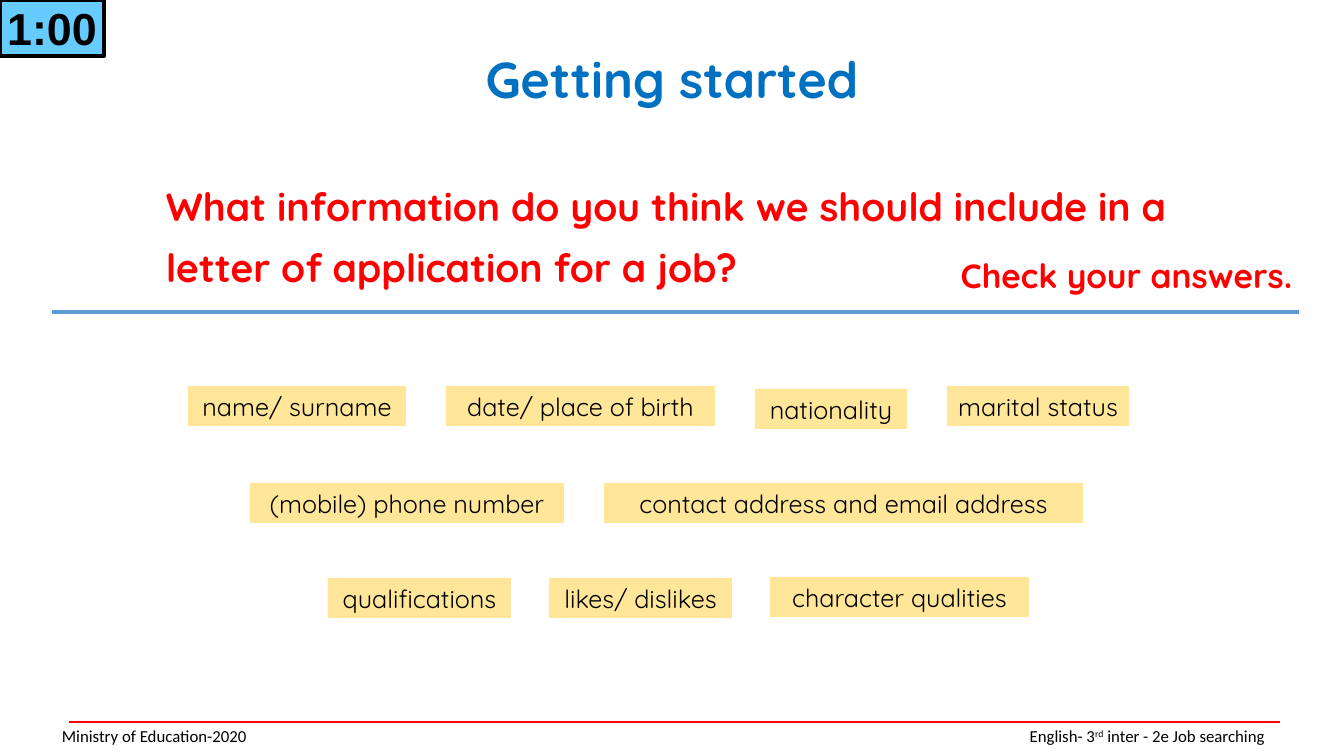
from lxml.etree import SubElement
from pptx import Presentation
from pptx.dml.color import RGBColor
from pptx.enum.shapes import MSO_CONNECTOR as Connector, MSO_SHAPE as Shape
from pptx.enum.text import MSO_ANCHOR as Anchor, MSO_AUTO_SIZE as AutoSize, PP_ALIGN as Align
from pptx.oxml.ns import qn
from pptx.util import Emu, Pt

BLUE = RGBColor(0x00, 0x70, 0xC0)
RED = RGBColor(0xFF, 0x00, 0x00)
BLACK = RGBColor(0x00, 0x00, 0x00)
SKY = RGBColor(0x66, 0xCC, 0xFF)
RULE_BLUE = RGBColor(0x5B, 0x9B, 0xD5)
YELLOW = RGBColor(0xFF, 0xE6, 0x99)
FONT = "Quicksand"

# Content
TITLE = "Getting started"
QUESTION = "What information do you think we should include in a letter of application for a job?"
CHECK = "Check your answers."
TIMER = "1:00"
FOOTER = [("Ministry of Education-2020\tEnglish- 3", False), ("rd", True),
          (" inter - 2e Job searching", False)]
FOOTER_TAB = 1203

# Answer rows: left, top, gap, [(text, width, vertical shift)]
CHIP_HEIGHT = 40
ANSWER_ROWS = [
    (188, 386, 40, [("name/ surname", 218, 0), ("date/ place of birth", 269, 0),
                    ("nationality", 152, 3), ("marital status", 182, 0)]),
    (250, 483, 40, [("(mobile) phone number", 314, 0),
                    ("contact address and email address", 479, 0)]),
    (328, 578, 38, [("qualifications", 183, 0), ("likes/ dislikes", 183, 0),
                    ("character qualities", 259, -1)]),
]


def px(length):
    return Emu(round(length * 914400 / 100.8))


def box(*lengths):
    return [px(length) for length in lengths]


def write(shape, text, size, color, bold=False, font=FONT, align=Align.CENTER,
          anchor=Anchor.TOP, spacing=None, wrap=True):
    frame = shape.text_frame
    frame.word_wrap = wrap
    frame.auto_size = AutoSize.NONE
    frame.vertical_anchor = anchor
    paragraph = frame.paragraphs[0]
    paragraph.alignment = align
    if spacing:
        paragraph.line_spacing = Pt(spacing)
    run = paragraph.add_run()
    run.text = text
    style(run, size, color, bold, font)


def style(run, size, color, bold, font):
    run.font.size = Pt(size)
    run.font.name = font
    run.font.bold = bold
    run.font.color.rgb = color


def add_rectangle(slide, bounds, fill):
    shape = slide.shapes.add_shape(Shape.RECTANGLE, *box(*bounds))
    shape.shadow.inherit = False
    shape.fill.solid()
    shape.fill.fore_color.rgb = fill
    shape.line.fill.background()
    return shape


def add_rule(slide, left, right, y, color, width):
    rule = slide.shapes.add_connector(Connector.STRAIGHT, *box(left, y, right, y))
    rule.line.color.rgb = color
    rule.line.width = Pt(width)
    SubElement(rule._element.spPr, qn("a:effectLst"))


def add_footer(slide):
    add_rule(slide, 69, 1280, 722, RED, 1)
    frame = slide.shapes.add_textbox(*box(52, 725, 1246, 21)).text_frame
    frame.word_wrap = True
    frame.margin_top = frame.margin_bottom = 0
    frame.vertical_anchor = Anchor.MIDDLE
    paragraph = frame.paragraphs[0]
    tabs = SubElement(paragraph._p.get_or_add_pPr(), qn("a:tabLst"))
    SubElement(tabs, qn("a:tab"), pos=str(px(FOOTER_TAB)), algn="r")
    for text, raised in FOOTER:
        run = paragraph.add_run()
        run.text = text
        style(run, 12, BLACK, False, "Calibri")
        if raised:
            run.font._element.set("baseline", "30000")


def main():
    presentation = Presentation()
    presentation.slide_width, presentation.slide_height = box(1344, 756)
    slide = presentation.slides.add_slide(presentation.slide_layouts[5])

    add_footer(slide)

    # Title, question and timer
    title = slide.shapes.title
    title.left, title.top, title.width, title.height = box(468, 43, 408, 71)
    write(title, TITLE, 36, BLUE, bold=True, spacing=43.2)
    question = slide.shapes.add_textbox(*box(156, 164, 1094, 125))
    write(question, QUESTION, 28, RED, bold=True, align=Align.LEFT, spacing=43.2)
    timer = add_rectangle(slide, (0, 0, 104, 56), SKY)
    timer.line.color.rgb = BLACK
    timer.line.width = Pt(3)
    write(timer, TIMER, 32, BLACK, bold=True, font="Arial", anchor=Anchor.MIDDLE, wrap=False)
    check = slide.shapes.add_textbox(*box(935, 250, 383, 50))
    write(check, CHECK, 24, RED, bold=True)
    add_rule(slide, 52, 1299, 312, RULE_BLUE, 3)

    # Answers
    for left, top, gap, chips in ANSWER_ROWS:
        for text, width, shift in chips:
            chip = add_rectangle(slide, (left, top + shift, width, CHIP_HEIGHT), YELLOW)
            write(chip, text, 18, BLACK)
            left += width + gap

    presentation.save("out.pptx")


if __name__ == "__main__":
    main()
